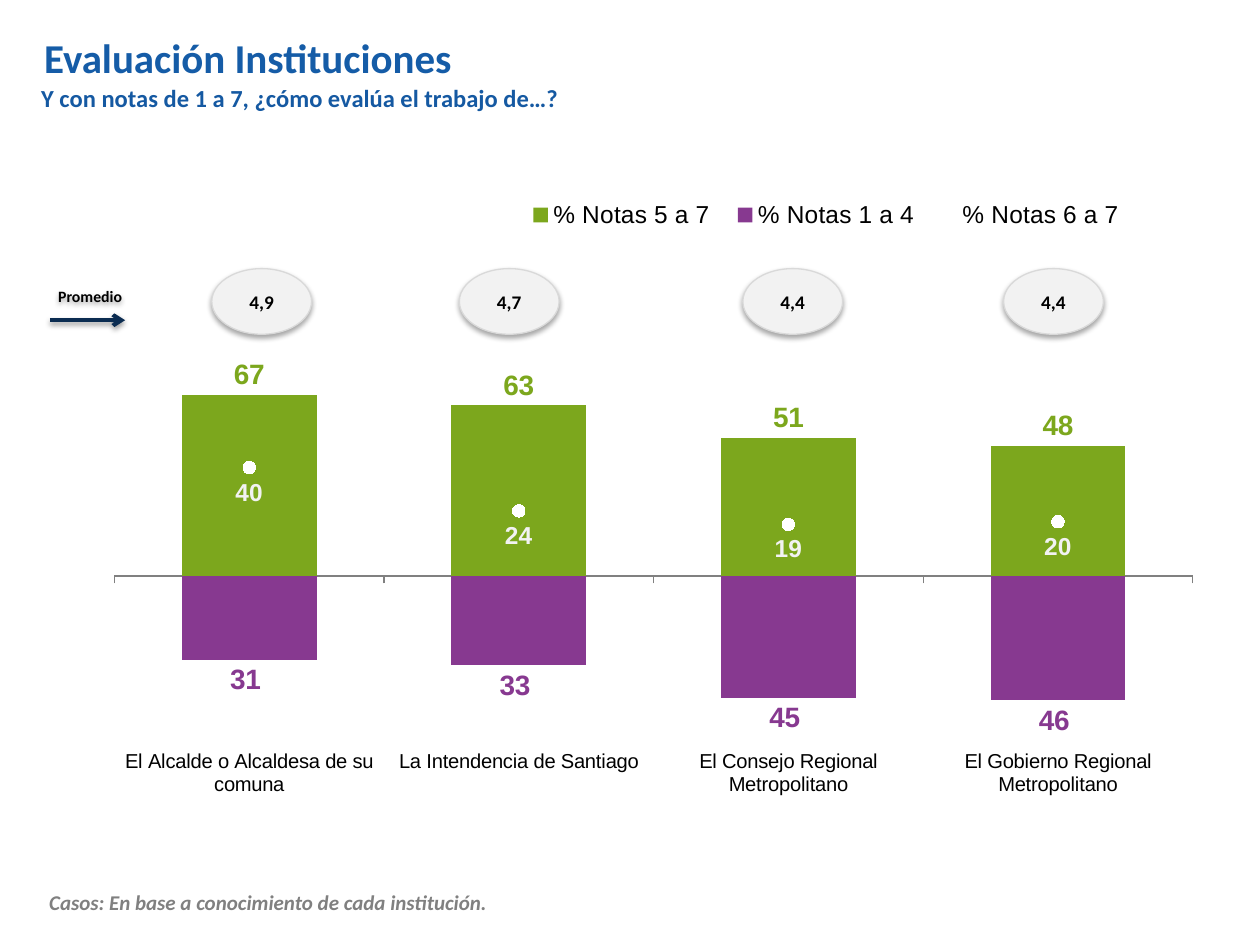
from lxml import etree
from pptx import Presentation
from pptx.chart.data import CategoryChartData
from pptx.dml.color import RGBColor
from pptx.enum.chart import (XL_CHART_TYPE, XL_LABEL_POSITION, XL_LEGEND_POSITION,
                             XL_MARKER_STYLE, XL_TICK_LABEL_POSITION, XL_TICK_MARK)
from pptx.enum.shapes import MSO_CONNECTOR, MSO_SHAPE
from pptx.enum.text import MSO_ANCHOR, MSO_AUTO_SIZE, PP_ALIGN
from pptx.oxml import parse_xml
from pptx.oxml.ns import nsdecls, qn
from pptx.util import Pt

COLUMNS = XL_CHART_TYPE.COLUMN_CLUSTERED
OUTSIDE, BELOW = XL_LABEL_POSITION.OUTSIDE_END, XL_LABEL_POSITION.BELOW
LEGEND_RIGHT = XL_LEGEND_POSITION.RIGHT
CIRCLE = XL_MARKER_STYLE.CIRCLE
LABELS_LOW = XL_TICK_LABEL_POSITION.LOW
TICK_OUT = XL_TICK_MARK.OUTSIDE
OVAL, ROUND_RECT = MSO_SHAPE.OVAL, MSO_SHAPE.ROUNDED_RECTANGLE
STRAIGHT = MSO_CONNECTOR.STRAIGHT
MIDDLE = MSO_ANCHOR.MIDDLE
FIT_SHAPE, NO_FIT = MSO_AUTO_SIZE.SHAPE_TO_FIT_TEXT, MSO_AUTO_SIZE.NONE
LEFT, CENTER, JUSTIFY = PP_ALIGN.LEFT, PP_ALIGN.CENTER, PP_ALIGN.JUSTIFY

BLACK = RGBColor(0x00, 0x00, 0x00)
WHITE = RGBColor(0xFF, 0xFF, 0xFF)
TITLE_BLUE = RGBColor(0x15, 0x5C, 0xA7)
SUBTITLE_BLUE = RGBColor(0x15, 0x59, 0xA2)
NAVY = RGBColor(0x0B, 0x2C, 0x51)
GREEN = RGBColor(0x7C, 0xA7, 0x1D)
PURPLE = RGBColor(0x87, 0x39, 0x90)
GRAY = RGBColor(0x80, 0x80, 0x80)
LIGHT_GRAY = RGBColor(0xD9, 0xD9, 0xD9)
PALE_GRAY = RGBColor(0xF2, 0xF2, 0xF2)

CATEGORIES = ["El Alcalde o Alcaldesa de su comuna", "La Intendencia de Santiago",
              "El Consejo Regional Metropolitano", "El Gobierno Regional Metropolitano"]
# name, values, label size, label colour, number format, label position
SERIES = [
    ("% Notas 5 a 7", [67, 63, 51, 48], 16, GREEN, "0", OUTSIDE),
    ("% Notas 1 a 4", [-31, -33, -45, -46], 16, PURPLE, "#,##0_ ;#,##0\\ ", OUTSIDE),
    ("% Notas 6 a 7", [40, 24, 19, 20], 14, PALE_GRAY, "0", BELOW),
]
# offset of each oval from the left of the row, and its average
AVERAGES = [(104.5, "4,9"), (246, "4,7"), (408, "4,4"), (557, "4,4")]


def format_font(font, size, color=BLACK, bold=False, italic=False, name="Calibri"):
    font.name, font.size = name, Pt(size)
    font.bold, font.italic = bold, italic
    font.color.rgb = color


def write_text(shape, text, align=LEFT, anchor=None, wrap=True, fit=NO_FIT, **font):
    tf = shape.text_frame
    tf.word_wrap, tf.auto_size = wrap, fit
    if anchor is not None:
        tf.vertical_anchor = anchor
    p = tf.paragraphs[0]
    p.alignment = align
    r = p.add_run()
    r.text = text
    format_font(r.font, **font)


def add_shadow(sp, alpha, blur, distance):
    """Append a downward black shadow; the line must be set before."""
    sp._element.spPr.append(parse_xml(
        f'<a:effectLst {nsdecls("a")}><a:outerShdw blurRad="{Pt(blur)}" '
        f'dist="{Pt(distance)}" dir="5400000" algn="t" rotWithShape="0">'
        f'<a:srgbClr val="000000"><a:alpha val="{alpha * 1000}"/></a:srgbClr>'
        f'</a:outerShdw></a:effectLst>'))


def set_layout(parent, index, x, y, w, h, inner=False):
    """Give a chart part a manual place, in fractions of the chart."""
    for old in parent.findall(qn("c:layout")):
        parent.remove(old)
    layout = parse_xml(f'<c:layout {nsdecls("c")}><c:manualLayout/></c:layout>')
    settings = [("layoutTarget", "inner")] if inner else []
    settings += [("xMode", "edge"), ("yMode", "edge"),
                 ("x", x), ("y", y), ("w", w), ("h", h)]
    for tag, value in settings:
        etree.SubElement(layout[0], qn(f"c:{tag}")).set("val", str(value))
    parent.insert(index, layout)


def move_last_series_to_line(chart):
    bars = chart._chartSpace.find(".//" + qn("c:barChart"))
    ser = bars.findall(qn("c:ser"))[-1]
    for bar_only in ser.findall(qn("c:invertIfNegative")):
        ser.remove(bar_only)
    line = parse_xml(f'<c:lineChart {nsdecls("c")}><c:grouping val="standard"/>'
                     '<c:varyColors val="0"/><c:marker val="1"/></c:lineChart>')
    line.insert(2, ser)
    for ax_id in bars.findall(qn("c:axId")):
        etree.SubElement(line, qn("c:axId")).set("val", ax_id.get("val"))
    bars.addnext(line)


def add_header(slide, x, y, w):
    title = slide.shapes.title
    title.left, title.top, title.width, title.height = Pt(x + 1.5), Pt(y), Pt(w), Pt(46)
    write_text(title, "Evaluación Instituciones", anchor=MIDDLE,
               size=23.4, color=TITLE_BLUE, bold=True)
    subtitle = slide.shapes.add_textbox(Pt(x), Pt(y + 34.5), Pt(w), Pt(24.5))
    write_text(subtitle, "Y con notas de 1 a 7, ¿cómo evalúa el trabajo de…?",
               align=JUSTIFY, fit=FIT_SHAPE, size=14, color=SUBTITLE_BLUE, bold=True)


def add_grades_chart(slide, x, y, w, h):
    data = CategoryChartData()
    data.categories = CATEGORIES
    for name, values, *_ in SERIES:
        data.add_series(name, values)
    chart = slide.shapes.add_chart(COLUMNS, Pt(x), Pt(y), Pt(w), Pt(h), data).chart
    format_font(chart.font, 10)
    chart.has_title = False
    move_last_series_to_line(chart)
    bar_plot, line_plot = list(chart.plots)
    bar_plot.gap_width = bar_plot.overlap = 100
    bar_plot.vary_by_categories = False

    bars, points = list(bar_plot.series), line_plot.series[0]
    for s, color in zip(bars, (GREEN, PURPLE)):
        s.invert_if_negative = False
        s.format.fill.solid()
        s.format.fill.fore_color.rgb = color
    points.smooth = False
    points.format.line.fill.background()
    points.marker.style, points.marker.size = CIRCLE, 7
    points.marker.format.fill.solid()
    points.marker.format.fill.fore_color.rgb = WHITE
    points.marker.format.line.color.rgb = WHITE

    for s, (_, _, size, color, number_format, position) in zip(bars + [points], SERIES):
        labels = s.data_labels
        labels.show_value = True
        labels.number_format, labels.number_format_is_linked = number_format, False
        labels.position = position
        format_font(labels.font, size, color, bold=True, name="Arial")

    axis = chart.category_axis
    axis.tick_label_position, axis.major_tick_mark = LABELS_LOW, TICK_OUT
    axis.format.line.color.rgb = GRAY
    format_font(axis.tick_labels.font, 11.5, name="Arial")
    scale = chart.value_axis
    scale.minimum_scale, scale.maximum_scale = -60, 80
    scale.has_major_gridlines = scale.visible = False

    chart.has_legend = True
    legend = chart.legend
    legend.position, legend.include_in_layout = LEGEND_RIGHT, False
    format_font(legend.font, 14, name="Arial")
    set_layout(legend._element, 1, 0.37, 0.01, 0.58, 0.05)
    set_layout(chart._chartSpace.find(".//" + qn("c:plotArea")), 0,
               0, 0.26, 1, 0.59, inner=True)


def add_averages_row(slide, x, y):
    label = slide.shapes.add_shape(ROUND_RECT, Pt(x), Pt(y + 2), Pt(70), Pt(27))
    label.fill.background()
    label.line.fill.background()
    add_shadow(label, 35, 3.1, 1.8)
    write_text(label, "Promedio", CENTER, MIDDLE, size=9, bold=True)

    arrow_y = Pt(y + 29.5)
    arrow = slide.shapes.add_connector(STRAIGHT, Pt(x + 12), arrow_y, Pt(x + 55), arrow_y)
    arrow.line.color.rgb, arrow.line.width = NAVY, Pt(2.25)
    etree.SubElement(arrow.line._get_or_add_ln(), qn("a:tailEnd")).set("type", "arrow")
    add_shadow(arrow, 38, 3.1, 1.6)

    for offset, average in AVERAGES:
        oval = slide.shapes.add_shape(OVAL, Pt(x + offset), Pt(y), Pt(57), Pt(37.5))
        oval.fill.solid()
        oval.fill.fore_color.rgb = PALE_GRAY
        oval.line.color.rgb, oval.line.width = LIGHT_GRAY, Pt(0.75)
        add_shadow(oval, 35, 3.1, 1.8)
        write_text(oval, average, CENTER, MIDDLE, size=11, bold=True)


def add_footnote(slide, x, y, w, h):
    note = slide.shapes.add_textbox(Pt(x), Pt(y), Pt(w), Pt(h))
    write_text(note, "Casos: En base a conocimiento de cada institución.", wrap=False,
               fit=FIT_SHAPE, size=12, color=GRAY, bold=True, italic=True)


def main():
    prs = Presentation()
    prs.slide_width, prs.slide_height = Pt(720), Pt(540)
    slide = prs.slides.add_slide(prs.slide_layouts.get_by_name("Title Only"))
    add_grades_chart(slide, 65, 110, 617, 367)
    add_footnote(slide, 21, 505, 314, 21.5)
    add_header(slide, 16.5, 9.5, 615)
    add_averages_row(slide, 16.5, 153.5)
    prs.save("out.pptx")


if __name__ == "__main__":
    main()
